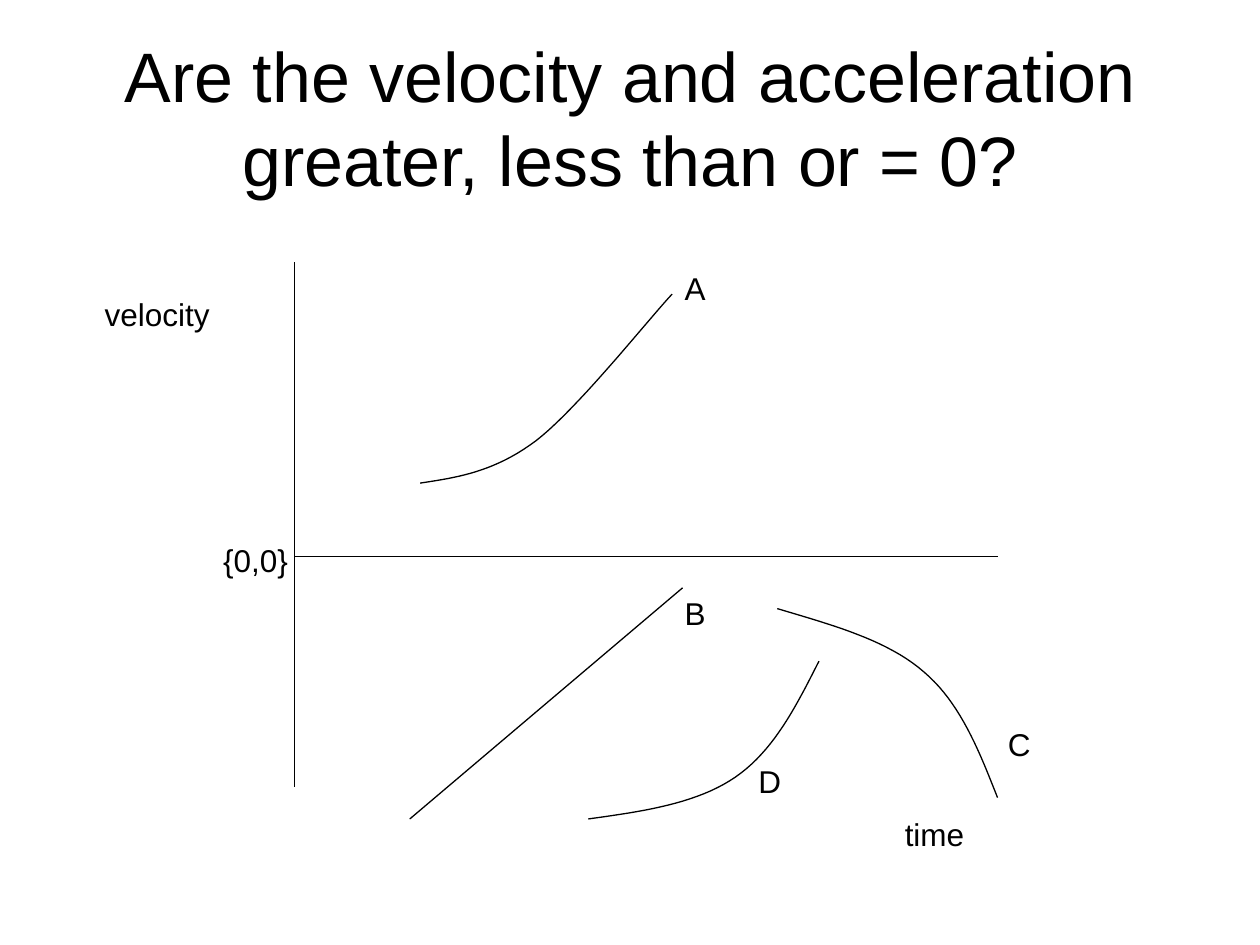
from dataclasses import dataclass

from lxml import etree
from pptx import Presentation
from pptx import util as u
from pptx.dml.color import RGBColor
from pptx.enum import shapes, text
from pptx.oxml.ns import qn


@dataclass(frozen=True)
class Theme:
    ink: RGBColor = RGBColor(0, 0, 0)
    paper: RGBColor = RGBColor(255, 255, 255)
    font: str = "Arial"
    title_size: int = 40
    label_size: int = 18
    line_width: float = 0.75


THEME = Theme()
TITLE = "Are the velocity and acceleration greater, less than or = 0?"
TITLE_BOX = (1.27, 0.76, 22.86, 3.18)
GRAPH_BOX = (5.93, 5.29, 14.18, 10.58)
TIME_AXIS_Y = 5.93
LABEL_HEIGHT = 1.02
STEPS_PER_BEND = 20

LABELS = [
    ("velocity", -4.07, 0.53, 2.62),
    ("time", 12.06, 11.02, 1.7),
    ("{0,0}", -1.68, 5.5, 1.83),
    ("A", 7.62, 0, 0.94),
    ("B", 7.62, 6.57, 0.94),
    ("C", 14.14, 9.21, 0.97),
    ("D", 9.11, 9.95, 0.97),
]
LINE_B = ((2.33, 11.22), (7.83, 6.56))
CURVES = {
    "A": [(2.54, 4.45), (3.27, 4.34), (4.03, 4.23), (4.87, 3.6),
          (5.71, 2.96), (7.15, 1.14), (7.62, 0.64)],
    "C": [(9.74, 6.98), (10.84, 7.31), (11.96, 7.61), (12.7, 8.26),
          (13.43, 8.88), (13.81, 9.85), (14.18, 10.79)],
    "D": [(5.93, 11.22), (7.03, 11.07), (8.12, 10.91), (8.89, 10.38),
          (9.67, 9.85), (10.13, 8.93), (10.58, 8.04)],
}


def add_text(slide, box, wording, size, wrap=False):
    textbox = slide.shapes.add_textbox(*map(u.Cm, box))
    frame = textbox.text_frame
    frame.text = wording
    frame.word_wrap = wrap
    font = frame.paragraphs[0].runs[0].font
    font.name, font.size = THEME.font, u.Pt(size)
    font.color.rgb = THEME.ink
    return frame


def style_line(line):
    line.color.rgb = THEME.ink
    line.width = u.Pt(THEME.line_width)


def add_line(slide, start, end):
    connector = slide.shapes.add_connector(
        shapes.MSO_CONNECTOR.STRAIGHT, *map(u.Cm, (*start, *end)))
    style_line(connector.line)
    etree.SubElement(connector._element.spPr, qn("a:effectLst"))


def bend_points(controls):
    for step in range(1, STEPS_PER_BEND + 1):
        t = step / STEPS_PER_BEND
        weights = ((1 - t) ** 3, 3 * t * (1 - t) ** 2, 3 * t * t * (1 - t), t ** 3)
        yield tuple(sum(w * value for w, value in zip(weights, axis))
                    for axis in zip(*controls))


def add_curve(slide, controls):
    points = [point for first in range(0, len(controls) - 1, 3)
              for point in bend_points(controls[first:first + 4])]
    builder = slide.shapes.build_freeform(*map(u.Cm, controls[0]))
    builder.add_line_segments([(u.Cm(x), u.Cm(y)) for x, y in points], close=False)
    curve = builder.convert_to_shape()
    curve.fill.background()
    curve.shadow.inherit = False
    style_line(curve.line)


def add_title(slide, box):
    frame = add_text(slide, box, TITLE, THEME.title_size, wrap=True)
    frame.vertical_anchor = text.MSO_ANCHOR.MIDDLE
    frame.paragraphs[0].alignment = text.PP_ALIGN.CENTER


def add_graph(slide, box):
    left, top, width, height = box

    def place(point):
        return left + point[0], top + point[1]

    add_line(slide, place((0, 0)), place((0, height)))
    add_line(slide, place((0, TIME_AXIS_Y)), place((width, TIME_AXIS_Y)))
    add_line(slide, *map(place, LINE_B))
    for controls in CURVES.values():
        add_curve(slide, [place(point) for point in controls])
    for wording, x, y, label_width in LABELS:
        frame = add_text(slide, (*place((x, y)), label_width, LABEL_HEIGHT),
                         wording, THEME.label_size)
        frame.auto_size = text.MSO_AUTO_SIZE.SHAPE_TO_FIT_TEXT


def main():
    deck = Presentation()
    deck.slide_width, deck.slide_height = u.Cm(25.4), u.Cm(19.05)
    slide = deck.slides.add_slide(deck.slide_layouts[6])
    slide.background.fill.solid()
    slide.background.fill.fore_color.rgb = THEME.paper
    add_title(slide, TITLE_BOX)
    add_graph(slide, GRAPH_BOX)
    deck.save("out.pptx")


if __name__ == "__main__":
    main()
